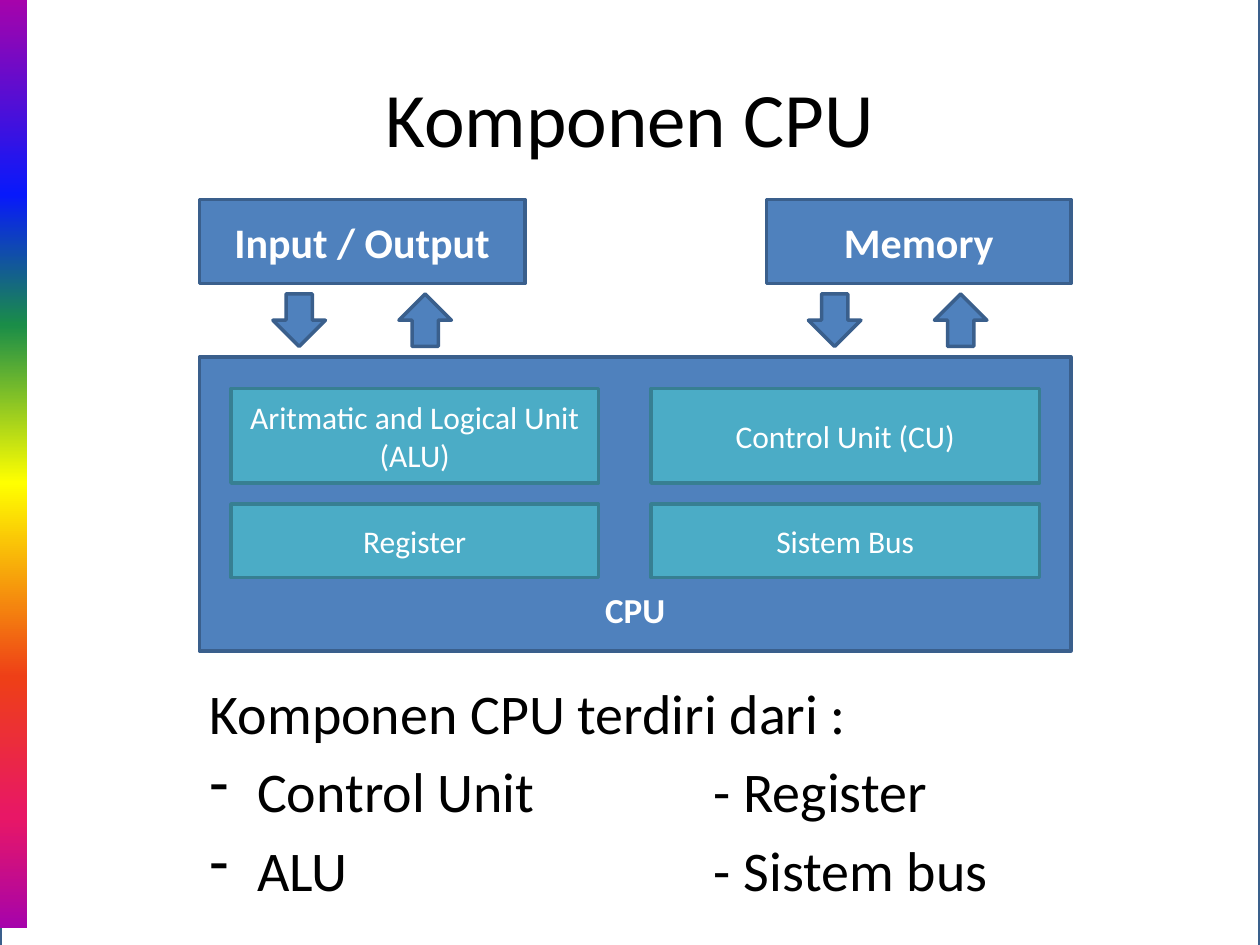
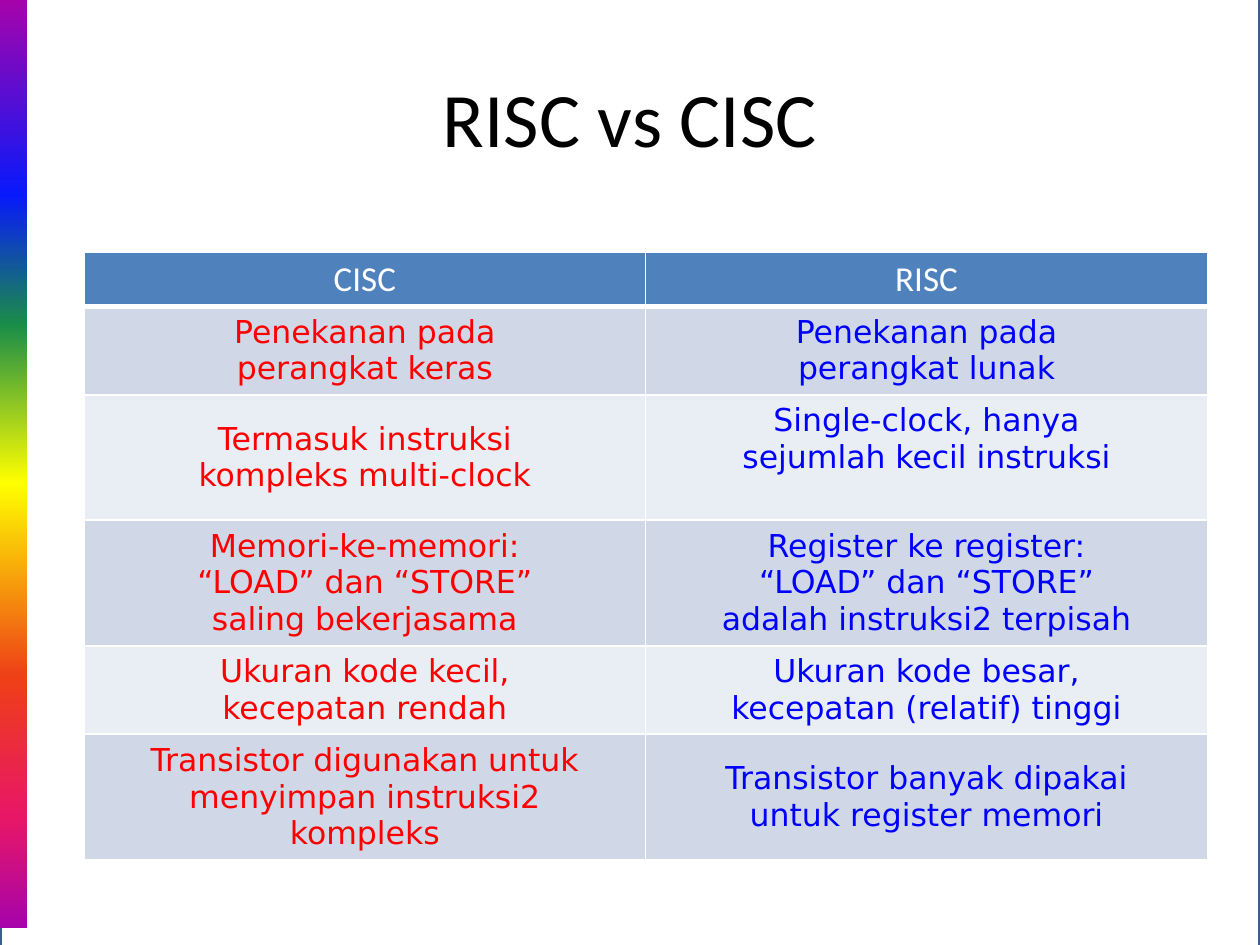
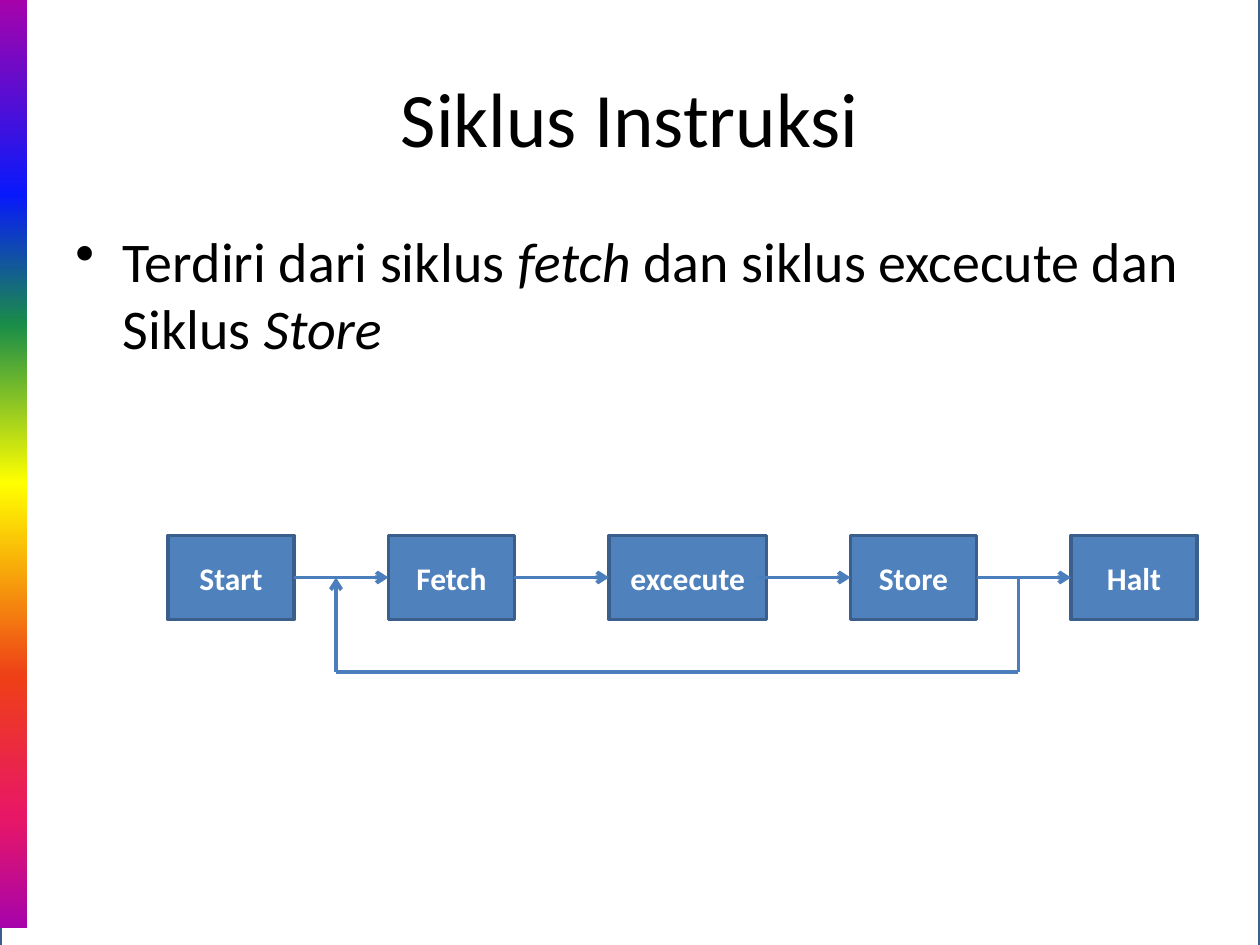
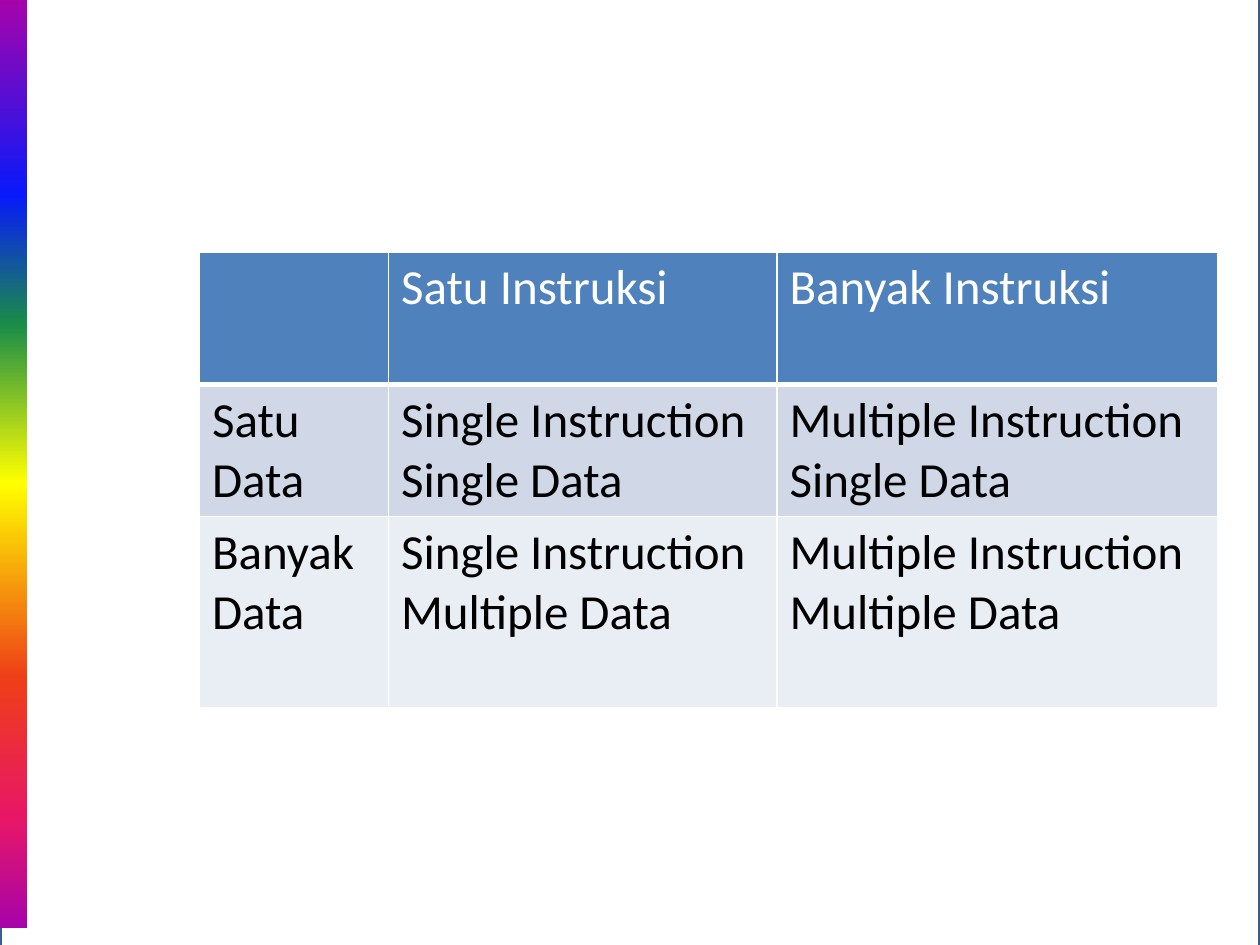
"""Build four slides on CPU components, RISC vs CISC and the instruction cycle."""
from lxml.etree import SubElement
from pptx import Presentation
from pptx.dml.color import RGBColor
from pptx.enum.shapes import MSO_CONNECTOR, MSO_SHAPE
from pptx.enum.text import MSO_ANCHOR, PP_ALIGN
from pptx.oxml.ns import qn
from pptx.util import Pt

PX = 7620
RECT, UP, DOWN = MSO_SHAPE.RECTANGLE, MSO_SHAPE.UP_ARROW, MSO_SHAPE.DOWN_ARROW
STRAIGHT = MSO_CONNECTOR.STRAIGHT
LEFT, CENTER = PP_ALIGN.LEFT, PP_ALIGN.CENTER
TOP, MIDDLE, BOTTOM = MSO_ANCHOR.TOP, MSO_ANCHOR.MIDDLE, MSO_ANCHOR.BOTTOM

WHITE = RGBColor(0xFF, 0xFF, 0xFF)
BLACK = RGBColor(0x00, 0x00, 0x00)
RED = RGBColor(0xFF, 0x00, 0x00)
BLUE = RGBColor(0x00, 0x00, 0xFF)
STEEL = RGBColor(0x4F, 0x81, 0xBD)
STEEL_EDGE = RGBColor(0x3A, 0x5F, 0x8C)
AQUA = RGBColor(0x4B, 0xAC, 0xC6)
AQUA_EDGE = RGBColor(0x37, 0x7F, 0x92)
FLOW = RGBColor(0x4B, 0x7E, 0xBC)
BANDS = [RGBColor(0xD0, 0xD8, 0xE8), RGBColor(0xE9, 0xED, 0xF4)]
RAINBOW = [(0, "A603AB"), (21, "0819FB"), (35, "1A8D48"), (52, "FFFF00"),
           (73, "EE3F17"), (88, "E81766"), (100, "A603AB")]


def write(frame, text, size, colour, align=CENTER, bold=False, font="Calibri", marks=()):
    frame.word_wrap = True
    frame.text = text
    for index, paragraph in enumerate(frame.paragraphs):
        paragraph.alignment = align
        if marks:
            props = paragraph._p.get_or_add_pPr()
            props.set("marL", str(45 * PX))
            props.set("indent", str(-45 * PX))
            if marks[index]:
                SubElement(props, qn("a:buChar"), char=marks[index])
            if "\t" in paragraph.text:
                stops = SubElement(props, qn("a:tabLst"))
                SubElement(stops, qn("a:tab"), pos=str(480 * PX), algn="l")
            if index:
                paragraph.space_before = Pt(6.4)
        paragraph.font.name = font
        paragraph.font.size = Pt(size)
        paragraph.font.bold = bold
        paragraph.font.color.rgb = colour


def add_block(slide, preset, bounds, fill=STEEL, edge=STEEL_EDGE):
    block = slide.shapes.add_shape(preset, *[PX * length for length in bounds])
    block.shadow.inherit = False
    block.fill.solid()
    block.fill.fore_color.rgb = fill
    block.line.color.rgb = edge
    block.line.width = Pt(2)
    block.text_frame.vertical_anchor = MIDDLE
    return block


deck = Presentation()
deck.slide_width, deck.slide_height = 1200 * PX, 900 * PX

slides = []
for heading in ["Komponen CPU", "RISC vs CISC", "Siklus Instruksi", ""]:
    slide = deck.slides.add_slide(deck.slide_layouts[6])
    slides.append(slide)
    page = add_block(slide, RECT, (0, -13, 1200, 936), WHITE)
    tint = page.element.spPr.find(qn("a:solidFill")).find(qn("a:srgbClr"))
    SubElement(tint, qn("a:alpha"), val="96000")
    stripe = add_block(slide, RECT, (0, 0, 26, 884))
    stripe.line.fill.background()
    stripe.fill.gradient()
    stripe.fill.gradient_angle = 270
    stops = stripe.element.spPr.find(qn("a:gradFill")).find(qn("a:gsLst"))
    stops.clear()
    for percent, colour in RAINBOW:
        stop = SubElement(stops, qn("a:gs"), pos=str(percent * 1000))
        SubElement(stop, qn("a:srgbClr"), val=colour)
    if heading:
        title = slide.shapes.add_textbox(60 * PX, 36 * PX, 1080 * PX, 150 * PX).text_frame
        title.vertical_anchor = MIDDLE
        write(title, heading, 44, BLACK)

components, comparison, cycle, classification = slides

for label, left, width in [("Input / Output", 190, 310), ("Memory", 730, 290)]:
    device = add_block(components, RECT, (left, 190, width, 80))
    write(device.text_frame, label, 24, WHITE, bold=True)
for left in (260, 770):
    add_block(components, DOWN, (left, 280, 50, 50))
    add_block(components, UP, (left + 120, 280, 50, 50))
cpu = add_block(components, RECT, (190, 340, 830, 280)).text_frame
cpu.vertical_anchor = BOTTOM
cpu.margin_bottom = 20 * PX
write(cpu, "CPU", 20, WHITE, bold=True)
for left, width, upper, lower in [
        (220, 350, "Aritmatic and Logical Unit\n(ALU)", "Register"),
        (620, 370, "Control Unit (CU)", "Sistem Bus")]:
    for label, top, height in [(upper, 370, 90), (lower, 480, 70)]:
        unit = add_block(components, RECT, (left, top, width, height), AQUA, AQUA_EDGE)
        write(unit.text_frame, label, 18, WHITE)
summary = components.shapes.add_textbox(188 * PX, 640 * PX, 984 * PX, 220 * PX).text_frame
write(summary, "Komponen CPU terdiri dari :\nControl Unit\t- Register\nALU\t- Sistem bus",
      32, BLACK, LEFT, marks=["", "-", "-"])

intro = cycle.shapes.add_textbox(60 * PX, 210 * PX, 1080 * PX, 594 * PX).text_frame
write(intro, "", 32, BLACK, LEFT, marks=["•"])
for words, italic in [("Terdiri dari siklus ", False), ("fetch ", True),
                      ("dan siklus excecute dan Siklus ", False), ("Store", True)]:
    run = intro.paragraphs[0].add_run()
    run.text = words
    run.font.italic = italic

stages = [("Start", 160, 120), ("Fetch", 370, 120), ("excecute", 580, 150),
          ("Store", 810, 120), ("Halt", 1020, 120)]
for label, left, width in stages:
    stage = add_block(cycle, RECT, (left, 510, width, 80))
    write(stage.text_frame, label, 18, WHITE, bold=True)
steps = [(left - 90, 550, left, 550, True) for _, left, _ in stages[1:]]
loop_back = [(970, 550, 970, 640, False), (970, 640, 320, 640, False),
             (320, 640, 320, 550, True)]
for *ends, pointed in steps + loop_back:
    arrow = cycle.shapes.add_connector(STRAIGHT, *[PX * end for end in ends])
    arrow.line.color.rgb = FLOW
    arrow.line.width = Pt(2.25)
    if pointed:
        SubElement(arrow.line._get_or_add_ln(), qn("a:tailEnd"), type="arrow")
    SubElement(arrow.element.spPr, qn("a:effectLst"))

comparison_rows = [
    ["CISC", "RISC"],
    ["Penekanan pada\vperangkat keras", "Penekanan pada\vperangkat lunak"],
    ["Termasuk instruksi\vkompleks multi-clock",
     "Single-clock, hanya\vsejumlah kecil instruksi"],
    ["Memori-ke-memori:\v“LOAD” dan “STORE”\vsaling bekerjasama",
     "Register ke register:\v“LOAD” dan “STORE”\vadalah instruksi2 terpisah"],
    ["Ukuran kode kecil,\vkecepatan rendah",
     "Ukuran kode besar,\vkecepatan (relatif) tinggi"],
    ["Transistor digunakan untuk\vmenyimpan instruksi2\vkompleks",
     "Transistor banyak dipakai\vuntuk register memori"],
]
classification_rows = [
    ["", "Satu Instruksi", "Banyak Instruksi"],
    ["Satu Data", "Single Instruction\nSingle Data", "Multiple Instruction\nSingle Data"],
    ["Banyak Data", "Single Instruction\nMultiple Data", "Multiple Instruction\nMultiple Data"],
]
grids = []
for slide, left, widths, heights, rows, head_size, size, font, inks, align, anchor in [
        (comparison, 80, [535, 535], [51, 82, 116, 116, 82, 116], comparison_rows,
         20, 18, "DejaVu Sans", [RED, BLUE], CENTER, MIDDLE),
        (classification, 190, [180, 370, 420], [126, 126, 182], classification_rows,
         28, 28, "Calibri", [BLACK] * 3, LEFT, TOP)]:
    grid = slide.shapes.add_table(len(rows), len(widths), left * PX, 240 * PX,
                                  sum(widths) * PX, sum(heights) * PX).table
    grids.append(grid)
    grid.first_row = grid.horz_banding = False
    for column, width in zip(grid.columns, widths):
        column.width = width * PX
    for r, (height, texts) in enumerate(zip(heights, rows)):
        grid.rows[r].height = height * PX
        for c, text in enumerate(texts):
            cell = grid.cell(r, c)
            for side in ("lnL", "lnR", "lnT", "lnB"):
                thick = (r == 0 and side == "lnB") or (r == 1 and side == "lnT")
                border = SubElement(cell._tc.get_or_add_tcPr(), qn("a:" + side),
                                    w=str(Pt(3 if thick and side == "lnB" else 1)))
                SubElement(SubElement(border, qn("a:solidFill")), qn("a:srgbClr"), val=str(WHITE))
            cell.fill.solid()
            if r == 0:
                cell.fill.fore_color.rgb = STEEL
                write(cell.text_frame, text, head_size, WHITE, align)
            else:
                cell.fill.fore_color.rgb = BANDS[(r - 1) % 2]
                cell.vertical_anchor = anchor
                write(cell.text_frame, text, size, inks[c], align, font=font)
grids[0].cell(2, 1).margin_bottom = 41 * PX

deck.save("out.pptx")
